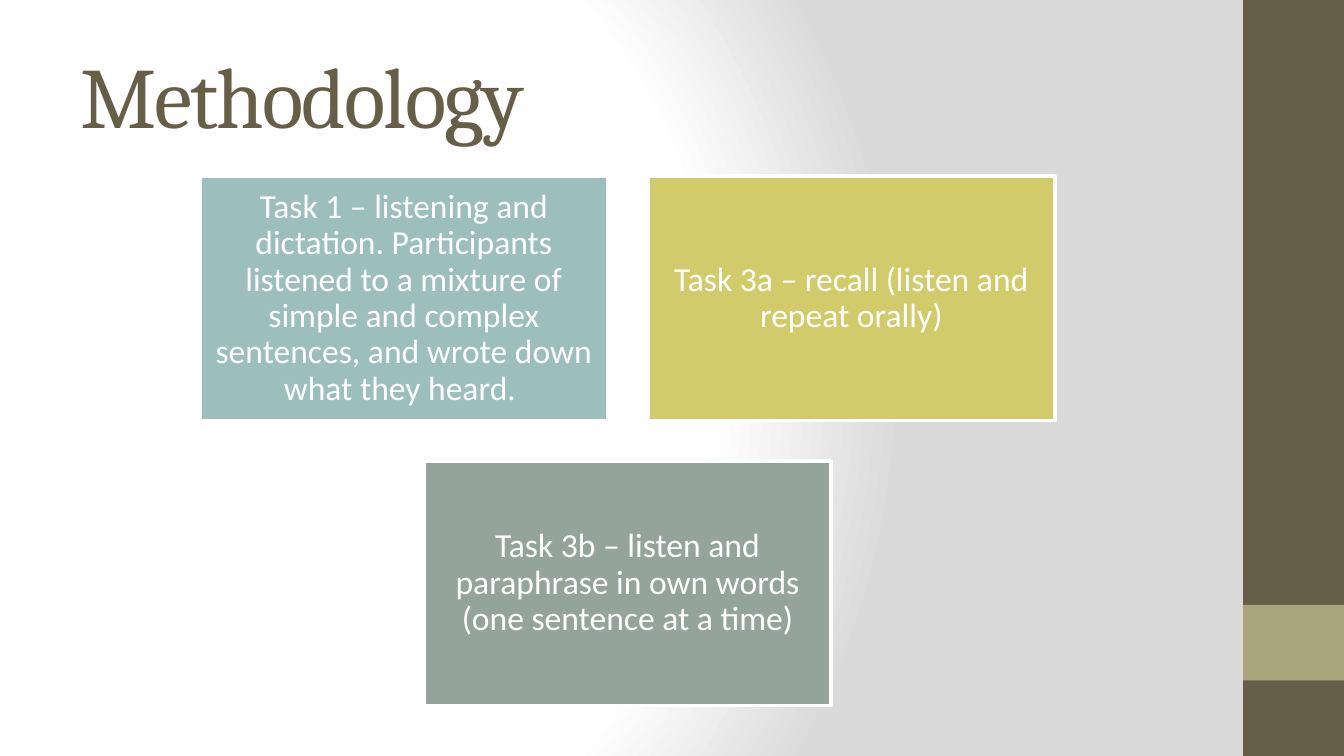
"""Build the Methodology slide with its three task boxes."""
import pptx
import pptx.dml.color
import pptx.enum.shapes
import pptx.enum.text
import pptx.oxml
import pptx.oxml.ns
import pptx.util

RGBColor = pptx.dml.color.RGBColor
WIDTH = 10
HEIGHT = WIDTH * 9 / 16
BROWN = RGBColor(0x67, 0x5E, 0x47)
KHAKI = RGBColor(0xA9, 0xA5, 0x7C)
TEAL = RGBColor(0x9C, 0xBE, 0xBD)
YELLOW = RGBColor(0xD2, 0xCB, 0x6C)
SAGE = RGBColor(0x95, 0xA3, 0x9D)
WHITE = RGBColor(0xFF, 0xFF, 0xFF)
GREY = RGBColor(0xDA, 0xDA, 0xDA)

GRID_LEFT, GRID_TOP = 1.49, 1.31
BOX_WIDTH, BOX_HEIGHT, GAP = 3.03, 1.82, 0.3

TASKS = [
    (0, 0, TEAL, "Task 1 – listening and dictation. Participants listened to a mixture of "
                 "simple and complex sentences, and wrote down what they heard. "),
    (1, 0, YELLOW, "Task 3a – recall (listen and repeat orally)"),
    (0.5, 1, SAGE, "Task 3b – listen and paraphrase in own words (one sentence at a time)"),
]


def inches(*lengths):
    """Convert several lengths from inches."""
    return [pptx.util.Inches(length) for length in lengths]


def paint_background(page):
    """Fill the page with a radial gradient from white to grey."""
    page.background.fill.gradient()
    gradient = page.element.find(".//" + pptx.oxml.ns.qn("a:gradFill"))
    stops = "".join(
        f'<a:gs pos="{share * 1000}"><a:srgbClr val="{color}"/></a:gs>'
        for share, color in ((0, WHITE), (75, WHITE), (100, GREY))
    )
    radial = pptx.oxml.parse_xml(
        f'<a:gradFill {pptx.oxml.ns.nsdecls("a")} rotWithShape="1"><a:gsLst>{stops}</a:gsLst>'
        '<a:path path="circle"><a:fillToRect l="20000" t="50000" r="100000" b="50000"/></a:path>'
        "</a:gradFill>"
    )
    gradient.getparent().replace(gradient, radial)


def add_rectangle(page, left, top, width, height, color):
    """Add a plain filled rectangle without outline."""
    box = page.shapes.add_shape(
        pptx.enum.shapes.MSO_SHAPE.RECTANGLE, *inches(left, top, width, height))
    box.shadow.inherit = False
    box.fill.solid()
    box.fill.fore_color.rgb = color
    box.line.fill.background()
    return box


def write(frame, text, font, size, color):
    """Set one wrapped, vertically centred paragraph and return it."""
    frame.text = text
    frame.word_wrap = True
    frame.vertical_anchor = pptx.enum.text.MSO_ANCHOR.MIDDLE
    para = frame.paragraphs[0]
    span = para.runs[0]
    span.font.name = font
    span.font.size = pptx.util.Pt(size)
    span.font.color.rgb = color
    return para


def add_title(page, text):
    """Add the slide title with slightly tightened letters."""
    box = page.shapes.add_textbox(*inches(0.5, 0.23, 8.33, 0.94))
    para = write(box.text_frame, text, "Cambria", 46, BROWN)
    para.runs[0].font._element.set("spc", "-100")


def add_task(page, column, row, color, text):
    """Add a white-edged task box at a grid position."""
    left = GRID_LEFT + column * (BOX_WIDTH + GAP)
    top = GRID_TOP + row * (BOX_HEIGHT + GAP)
    box = add_rectangle(page, left, top, BOX_WIDTH, BOX_HEIGHT, color)
    box.line.color.rgb = WHITE
    box.line.width = pptx.util.Pt(2)
    frame = box.text_frame
    frame.margin_left, frame.margin_top, frame.margin_right, frame.margin_bottom = inches(
        *[0.07] * 4)
    para = write(frame, text, "Calibri", 18, WHITE)
    para.alignment = pptx.enum.text.PP_ALIGN.CENTER
    para.line_spacing = 0.9


def main():
    """Assemble and save the deck."""
    deck = pptx.Presentation()
    deck.slide_width, deck.slide_height = inches(WIDTH, HEIGHT)
    page = deck.slides.add_slide(deck.slide_layouts[6])
    paint_background(page)
    band_left, band_width = 0.925 * WIDTH, 0.075 * WIDTH
    add_rectangle(page, band_left, 0, band_width, HEIGHT, BROWN)
    add_rectangle(page, band_left, 0.8 * HEIGHT, band_width, 0.1 * HEIGHT, KHAKI)
    add_title(page, "Methodology")
    for task in TASKS:
        add_task(page, *task)
    deck.save("out.pptx")


if __name__ == "__main__":
    main()
